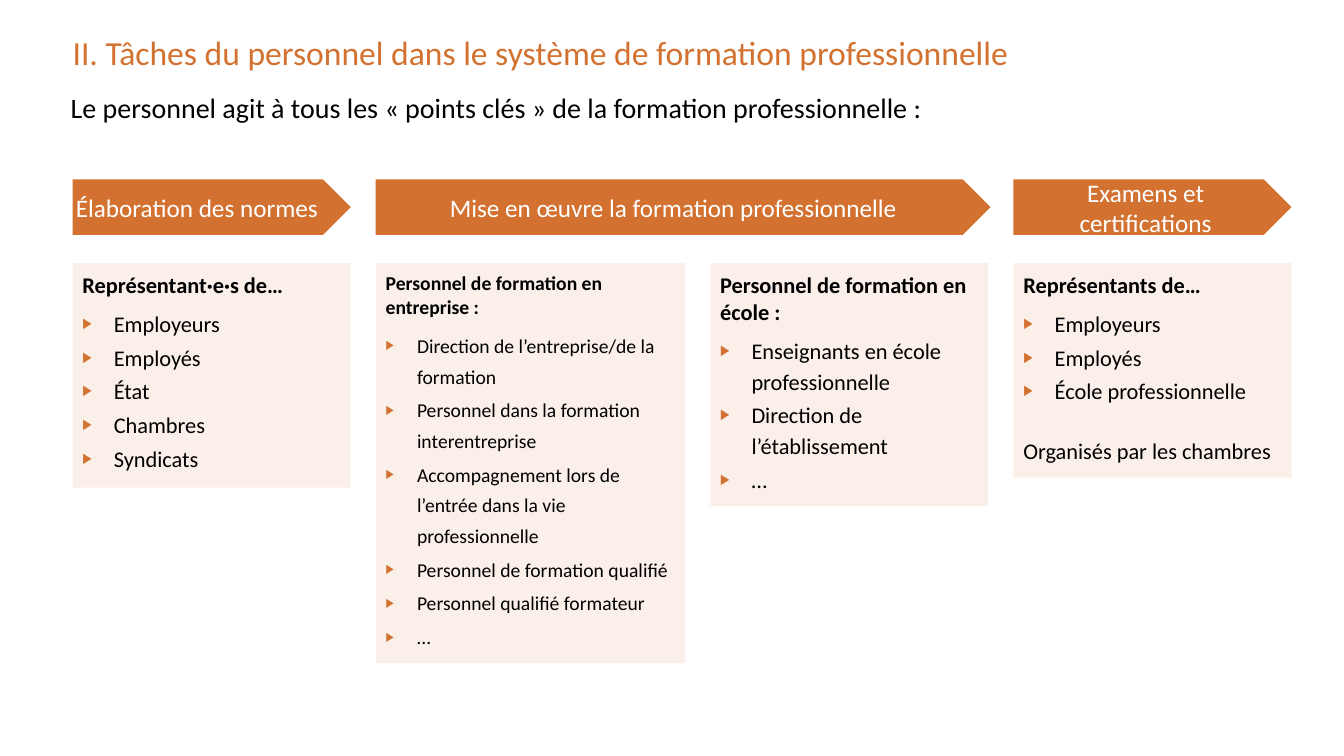
import pptx
import pptx.util
import pptx.dml.color
import pptx.enum.shapes
import pptx.enum.text
import pptx.oxml.ns
import lxml.etree

Cm = pptx.util.Cm
Pt = pptx.util.Pt
MSO_SHAPE = pptx.enum.shapes.MSO_SHAPE
ANCHOR = pptx.enum.text.MSO_ANCHOR
ALIGN = pptx.enum.text.PP_ALIGN
AUTO_SIZE = pptx.enum.text.MSO_AUTO_SIZE
ORANGE = pptx.dml.color.RGBColor(0xD3, 0x72, 0x30)
BLACK = pptx.dml.color.RGBColor(0, 0, 0)
WHITE = pptx.dml.color.RGBColor(0xFF, 0xFF, 0xFF)

LEFT, GAP = 1.83, 0.63
NARROW, WIDE, DOUBLE = 7.01, 7.8, 15.49
STEP_TOP, STEP_HEIGHT = 4.52, 1.4
ROLE_TOP = 6.63
STEPS = [
    (0, NARROW, "Élaboration des normes ", 0),
    (1, DOUBLE, "Mise en œuvre la formation professionnelle ", 0.25),
    (3, NARROW, "Examens et certifications", 0.25),
]
ROLES = [
    (NARROW, 5.66, 16, "Représentant·e·s de…",
     ["Employeurs", "Employés", "État", "Chambres", "Syndicats"], None),
    (WIDE, 10.08, 14, "Personnel de formation en entreprise :",
     ["Direction de l’entreprise/de la formation",
      "Personnel dans la formation interentreprise",
      "Accompagnement lors de l’entrée dans la vie professionnelle",
      "Personnel de formation qualifié", "Personnel qualifié formateur", "…"], None),
    (NARROW, 6.12, 16, "Personnel de formation en école :",
     ["Enseignants en école professionnelle", "Direction de l’établissement", "…"], None),
    (NARROW, 5.41, 16, "Représentants de…",
     ["Employeurs", "Employés", "École professionnelle"], "Organisés par les chambres"),
]


def apply(target, values):
    for key, value in values.items():
        setattr(target, key, value)


def add_element(parent, tag, **attributes):
    return lxml.etree.SubElement(parent, pptx.oxml.ns.qn(tag), attributes)


class SlideBuilder:
    font_name = "Calibri"
    bullet_format = {"line_spacing": Pt(22), "space_after": Pt(2)}

    def __init__(self, slide):
        self.slide = slide

    def frame(self, shape, margins, **values):
        sides = ("margin_left", "margin_top", "margin_right", "margin_bottom")
        lengths = dict(zip(sides, map(Cm, margins)))
        apply(shape.text_frame, {"word_wrap": True, **lengths, **values})
        return shape.text_frame

    def fill_paragraph(self, paragraph, text, size, color, bold=False, **values):
        apply(paragraph, values)
        run = paragraph.add_run()
        run.text = text
        apply(run.font, {"name": self.font_name, "size": Pt(size), "bold": bold})
        run.font.color.rgb = color

    def heading(self, box, text, size, color, margins, **values):
        label = self.slide.shapes.add_textbox(*map(Cm, box))
        frame = self.frame(label, margins, **values)
        self.fill_paragraph(frame.paragraphs[0], text, size, color)

    def filled(self, kind, box):
        shape = self.slide.shapes.add_shape(kind, *map(Cm, box))
        shape.shadow.inherit = False
        shape.fill.solid()
        shape.fill.fore_color.rgb = ORANGE
        shape.line.fill.background()
        return shape

    def step(self, box, text, margin_left):
        arrow = self.filled(MSO_SHAPE.PENTAGON, box)
        frame = self.frame(arrow, (margin_left, 0.13, 0.25, 0.13),
                           vertical_anchor=ANCHOR.MIDDLE)
        self.fill_paragraph(frame.paragraphs[0], text, 18, WHITE, alignment=ALIGN.CENTER)

    def bullet(self, paragraph, text, size):
        properties = paragraph._p.get_or_add_pPr()
        indents = {"marL": str(Cm(0.79)), "indent": str(Cm(-0.79))}
        for key, value in indents.items():
            properties.set(key, value)
        color = add_element(properties, "a:buClr")
        add_element(color, "a:srgbClr", val=str(ORANGE))
        add_element(properties, "a:buSzPct", val="65000")
        add_element(properties, "a:buFont", typeface=self.font_name)
        add_element(properties, "a:buChar", char="▶")
        self.fill_paragraph(paragraph, text, size, BLACK, alignment=ALIGN.LEFT,
                            **self.bullet_format)

    def role(self, box, size, title, members, closing):
        panel = self.filled(MSO_SHAPE.RECTANGLE, box)
        tint = panel._element.spPr.find(".//" + pptx.oxml.ns.qn("a:srgbClr"))
        add_element(tint, "a:alpha", val="10000")
        frame = self.frame(panel, (0.25, 0.2, 0.25, 0.3),
                           vertical_anchor=ANCHOR.TOP, auto_size=AUTO_SIZE.SHAPE_TO_FIT_TEXT)
        self.fill_paragraph(frame.paragraphs[0], title, size, BLACK, bold=True,
                            alignment=ALIGN.LEFT, space_after=Pt(6))
        for member in members:
            self.bullet(frame.add_paragraph(), member, size)
        if closing:
            self.fill_paragraph(frame.add_paragraph(), closing, size, BLACK,
                                alignment=ALIGN.LEFT, space_before=Pt(21.5),
                                space_after=Pt(2))


def main():
    deck = pptx.Presentation()
    apply(deck, {"slide_width": Cm(33.87), "slide_height": Cm(19.05)})
    builder = SlideBuilder(deck.slides.add_slide(deck.slide_layouts[6]))
    builder.heading((LEFT, 0.81, 25, 1.24),
                    "II. Tâches du personnel dans le système de formation professionnelle",
                    24, ORANGE, (0, 0, 0, 0))
    builder.heading((1.53, 2.16, 25.68, 1.12),
                    "Le personnel agit à tous les « points clés » de la formation professionnelle :",
                    20, BLACK, (0.25, 0.13, 0.25, 0.13), auto_size=AUTO_SIZE.SHAPE_TO_FIT_TEXT)
    columns = []
    left = LEFT
    for width, height, *content in ROLES:
        builder.role((left, ROLE_TOP, width, height), *content)
        columns.append(left)
        left += width + GAP
    for column, width, text, margin_left in STEPS:
        builder.step((columns[column], STEP_TOP, width, STEP_HEIGHT), text, margin_left)
    deck.save("out.pptx")


if __name__ == "__main__":
    main()
